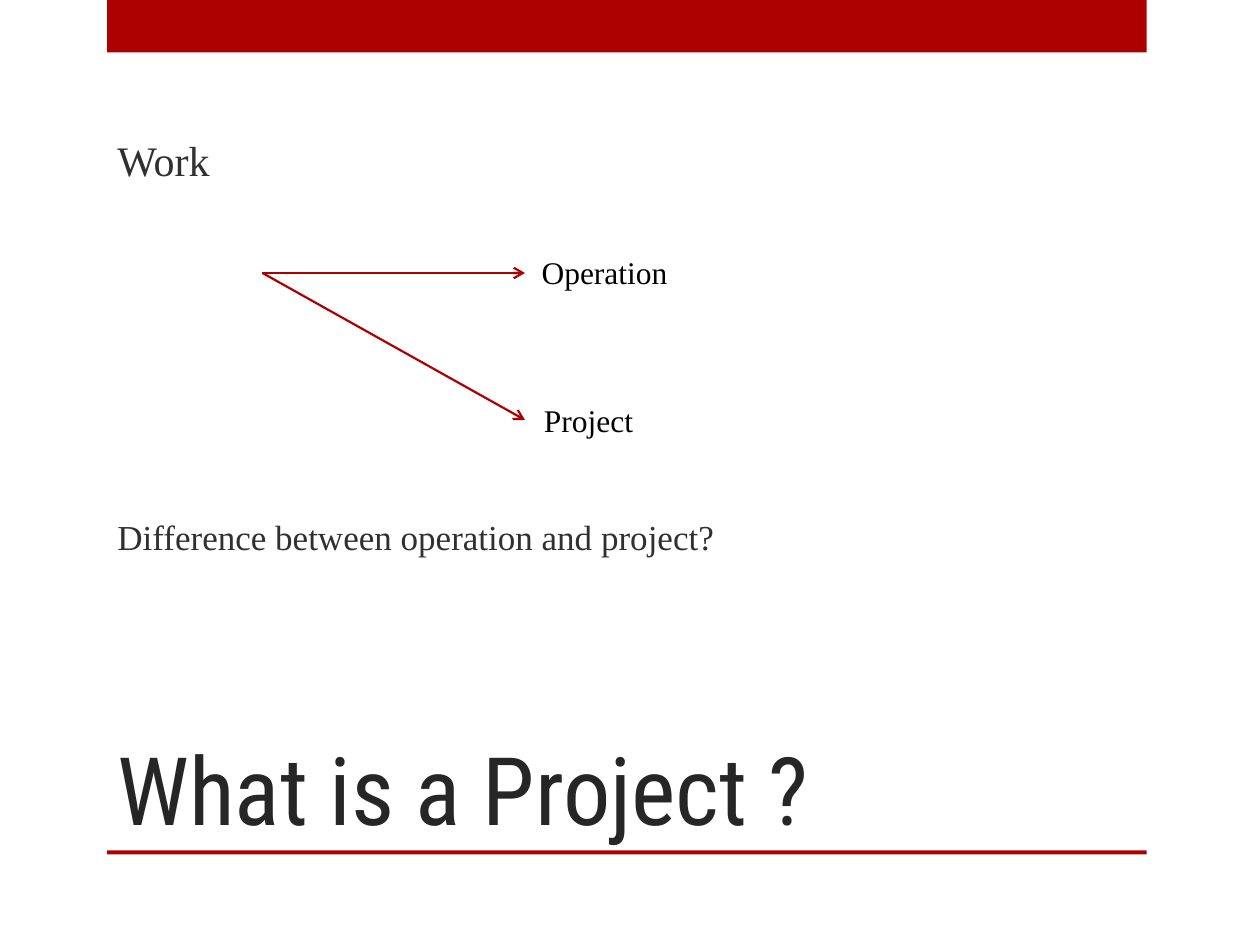
from lxml import etree
from pptx import Presentation
from pptx.dml.color import RGBColor
from pptx.enum.shapes import MSO_CONNECTOR, MSO_SHAPE
from pptx.enum.text import MSO_ANCHOR
from pptx.oxml.ns import qn
from pptx.util import Pt

RECTANGLE = MSO_SHAPE.RECTANGLE
STRAIGHT = MSO_CONNECTOR.STRAIGHT
TOP, BOTTOM = MSO_ANCHOR.TOP, MSO_ANCHOR.BOTTOM

RED, TITLE_GREY, BODY_GREY, BLACK = "AD0101", "262626", "303030", "000000"
TITLE_FONT, BODY_FONT = "Roboto Condensed", "Times New Roman"


def color(hex_string):
    return RGBColor.from_string(hex_string)


def add_bar(slide, left, top, width, height):
    bar = slide.shapes.add_shape(RECTANGLE, Pt(left), Pt(top), Pt(width), Pt(height))
    bar.shadow.inherit = False
    bar.fill.solid()
    bar.fill.fore_color.rgb = color(RED)
    bar.line.fill.background()


def add_text(slide, left, top, width, height, lines, font, hex_string, anchor=TOP):
    """Each line is (text, size, space before)."""
    box = slide.shapes.add_textbox(Pt(left), Pt(top), Pt(width), Pt(height))
    frame = box.text_frame
    frame.word_wrap = True
    frame.vertical_anchor = anchor
    for index, (text, size, space_before) in enumerate(lines):
        para = frame.add_paragraph() if index else frame.paragraphs[0]
        para.text = text
        para.space_before = Pt(space_before)
        para.font.name = font
        para.font.size = Pt(size)
        para.font.color.rgb = color(hex_string)
    return frame


def add_arrow(slide, start, end):
    arrow = slide.shapes.add_connector(STRAIGHT, *map(Pt, start + end))
    arrow.line.color.rgb = color(RED)
    arrow.line.width = Pt(1.25)
    line = arrow.line._get_or_add_ln()
    etree.SubElement(line, qn("a:tailEnd"), type="arrow")
    etree.SubElement(arrow._element.spPr, qn("a:effectLst"))


def main():
    deck = Presentation()
    deck.slide_width, deck.slide_height = Pt(720), Pt(540)
    slide = deck.slides.add_slide(deck.slide_layouts[6])

    # Top band and rule under the title
    add_bar(slide, 61.2, 0, 594, 30)
    add_bar(slide, 61.2, 486, 594, 2.2)

    # Title and body
    add_text(slide, 60, 360, 534, 126, [("What is a Project ?", 54, 0)],
             TITLE_FONT, TITLE_GREY, BOTTOM)
    body = add_text(slide, 60, 54, 594, 306,
                    [("Work", 24, 0),
                     ("Difference between operation and project?", 20, 189)],
                    BODY_FONT, BODY_GREY)
    body.margin_top = Pt(23)

    # Work branches into two kinds
    branches = [("Operation", 156, 302.4, 141.1), ("Project", 240, 303.8, 225.4)]
    for label, arrow_end, left, top in branches:
        add_arrow(slide, (150, 156), (300, arrow_end))
        add_text(slide, left, top, 360, 29, [(label, 18, 0)], BODY_FONT, BLACK)

    deck.save("out.pptx")


if __name__ == "__main__":
    main()
